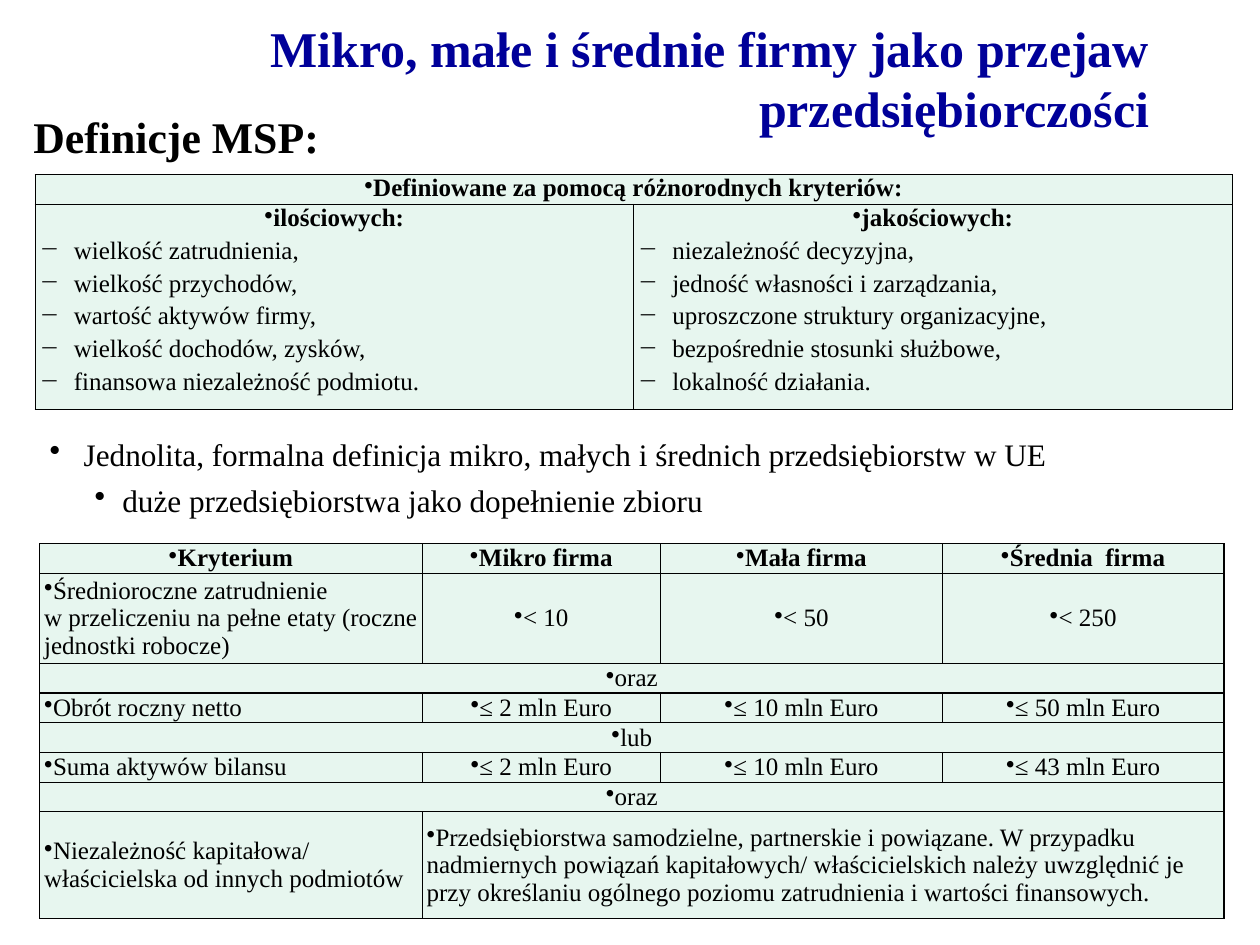
from lxml.etree import SubElement
from pptx import Presentation
from pptx.dml.color import RGBColor
from pptx.enum.text import MSO_ANCHOR, MSO_AUTO_SIZE, PP_ALIGN
from pptx.oxml.ns import qn
from pptx.util import Inches, Pt

COLORS = {"title": "000099", "text": "000000", "cell": "E7F6EF", "line": "000000"}


class Deck:
    """Holds the style and the current slide, and adds each kind of element."""

    def __init__(self, wide, high):
        self.show = Presentation()
        self.show.slide_width, self.show.slide_height = Inches(wide), Inches(high)
        self.slide = self.show.slides.add_slide(self.show.slide_layouts[5])

    def style(self, para, text, size, bold=False, color="text", align=PP_ALIGN.LEFT,
              bullet=None, left=0, hang=0, **space):
        """Fill one paragraph and format it."""
        para.text = text
        para.alignment = align
        for name, value in space.items():
            setattr(para, name, value)
        if bullet:
            props = para._p.get_or_add_pPr()
            props.set("marL", str(Inches(left)))
            props.set("indent", str(-Inches(hang)))
            SubElement(props, qn("a:buChar")).set("char", bullet)
        form = {"name": "Times New Roman", "size": Pt(size), "bold": bold}
        for run in para.runs:
            for name, value in form.items():
                setattr(run.font, name, value)
            run.font.color.rgb = RGBColor.from_string(COLORS[color])

    def place(self, shape, box, wrap=True):
        """Set the bounds and the margins of a text shape."""
        shape.left, shape.top, shape.width, shape.height = map(Inches, box)
        frame = shape.text_frame
        form = {"margin_left": Inches(0.14), "margin_right": Inches(0.14),
                "margin_top": Inches(0.07), "margin_bottom": Inches(0.07),
                "word_wrap": wrap, "auto_size": MSO_AUTO_SIZE.NONE}
        for name, value in form.items():
            setattr(frame, name, value)
        return frame

    def title(self, text, box):
        """Move and fill the title placeholder."""
        frame = self.place(self.slide.shapes.title, box)
        self.style(frame.paragraphs[0], text, 40, True, "title", PP_ALIGN.RIGHT)

    def text(self, items, box, wrap=True):
        """Add a text box from pairs of text and format."""
        shape = self.slide.shapes.add_textbox(*map(Inches, box))
        self.fill(self.place(shape, box, wrap), items)

    def fill(self, frame, items):
        """Add one paragraph for each pair of text and format."""
        for i, (text, form) in enumerate(items):
            para = frame.add_paragraph() if i else frame.paragraphs[0]
            self.style(para, text, **form)

    def table(self, left, top, cols, rows):
        """Add an empty table with bordered, filled cells."""
        frame = self.slide.shapes.add_table(
            len(rows), len(cols), Inches(left), Inches(top),
            Inches(sum(cols)), Inches(sum(rows)))
        table = frame.table
        table.first_row = table.horz_banding = False
        for col, wide in zip(table.columns, cols):
            col.width = Inches(wide)
        for row, high in zip(table.rows, rows):
            row.height = Inches(high)
        for cell in table.iter_cells():
            self.border(cell)
            cell.fill.solid()
            cell.fill.fore_color.rgb = RGBColor.from_string(COLORS["cell"])
            cell.margin_left = cell.margin_right = Inches(0.05)
            cell.margin_top = cell.margin_bottom = 0
        return table

    def border(self, cell):
        """Draw a thin line on each side of a cell."""
        props = cell._tc.get_or_add_tcPr()
        for side in ("lnL", "lnR", "lnT", "lnB"):
            line = SubElement(props, qn(f"a:{side}"), w=str(Pt(1)))
            paint = SubElement(line, qn("a:solidFill"))
            SubElement(paint, qn("a:srgbClr"), val=COLORS["line"])


def main():
    """Build the slide and save it."""
    deck = Deck(14, 10.5)
    deck.title("Mikro, małe i średnie firmy jako przejaw przedsiębiorczości",
               (-1.09, 0.12, 14, 1.49))
    deck.text([("Definicje MSP:", {"size": 35, "bold": True})],
              (0.23, 1.15, 3.48, 0.73), wrap=False)

    plain = {"size": 20, "bullet": "•"}
    mid = {**plain, "align": PP_ALIGN.CENTER}
    head = {**mid, "bold": True}
    dash = {"size": 20, "bullet": "−", "left": 0.38, "hang": 0.38,
            "space_before": Pt(2), "space_after": Pt(2)}

    kinds = deck.table(0.39, 1.94, [6.65, 6.65], [0.33, 2.28])
    kinds.cell(0, 0).merge(kinds.cell(0, 1))
    deck.fill(kinds.cell(0, 0).text_frame,
              [("Definiowane za pomocą różnorodnych kryteriów:", head)])
    lists = {
        "ilościowych:": ["wielkość zatrudnienia,", "wielkość przychodów,",
                         "wartość aktywów firmy,", "wielkość dochodów, zysków,",
                         "finansowa niezależność podmiotu."],
        "jakościowych:": ["niezależność decyzyjna,", "jedność własności i zarządzania,",
                          "uproszczone struktury organizacyjne,",
                          "bezpośrednie stosunki służbowe,", "lokalność działania."],
    }
    for col, (name, items) in enumerate(lists.items()):
        deck.fill(kinds.cell(1, col).text_frame,
                  [(name, {**head, "space_after": Pt(2)})] + [(t, dash) for t in items])

    point = {"size": 25, "bullet": "•", "line_spacing": 1.15}
    deck.text([
        ("Jednolita, formalna definicja mikro, małych i średnich przedsiębiorstw w UE",
         {**point, "left": 0.38, "hang": 0.38}),
        ("duże przedsiębiorstwa jako dopełnienie zbioru",
         {**point, "left": 0.81, "hang": 0.31, "space_before": Pt(3)}),
    ], (0.41, 4.7, 13.18, 0.7))

    data = [
        ["Kryterium", "Mikro firma", "Mała firma", "Średnia  firma"],
        ["Średnioroczne zatrudnienie \vw przeliczeniu na pełne etaty "
         "(roczne jednostki robocze)", "< 10", "< 50", "< 250"],
        ["oraz"],
        ["Obrót roczny netto", "≤ 2 mln Euro", "≤ 10 mln Euro", "≤ 50 mln Euro"],
        ["lub"],
        ["Suma aktywów bilansu", "≤ 2 mln Euro", "≤ 10 mln Euro", "≤ 43 mln Euro"],
        ["oraz"],
        ["Niezależność kapitałowa/ właścicielska od innych podmiotów",
         "Przedsiębiorstwa samodzielne, partnerskie i powiązane. W przypadku "
         "nadmiernych powiązań kapitałowych/ właścicielskich należy uwzględnić je "
         "przy określaniu ogólnego poziomu zatrudnienia i wartości finansowych."],
    ]
    sizes = deck.table(0.44, 6.04, [4.25, 2.65, 3.13, 3.13],
                       [0.33, 1] + [0.33] * 5 + [1.19])
    for r, row in enumerate(data):
        if len(row) < 4:
            sizes.cell(r, len(row) - 1).merge(sizes.cell(r, 3))
        for c, text in enumerate(row):
            cell = sizes.cell(r, c)
            cell.vertical_anchor = MSO_ANCHOR.MIDDLE
            side = len(row) == 2 or (c == 0 and len(row) == 4)
            form = head if r == 0 else plain if side else mid
            deck.fill(cell.text_frame, [(text, form)])

    deck.show.save("out.pptx")


if __name__ == "__main__":
    main()
